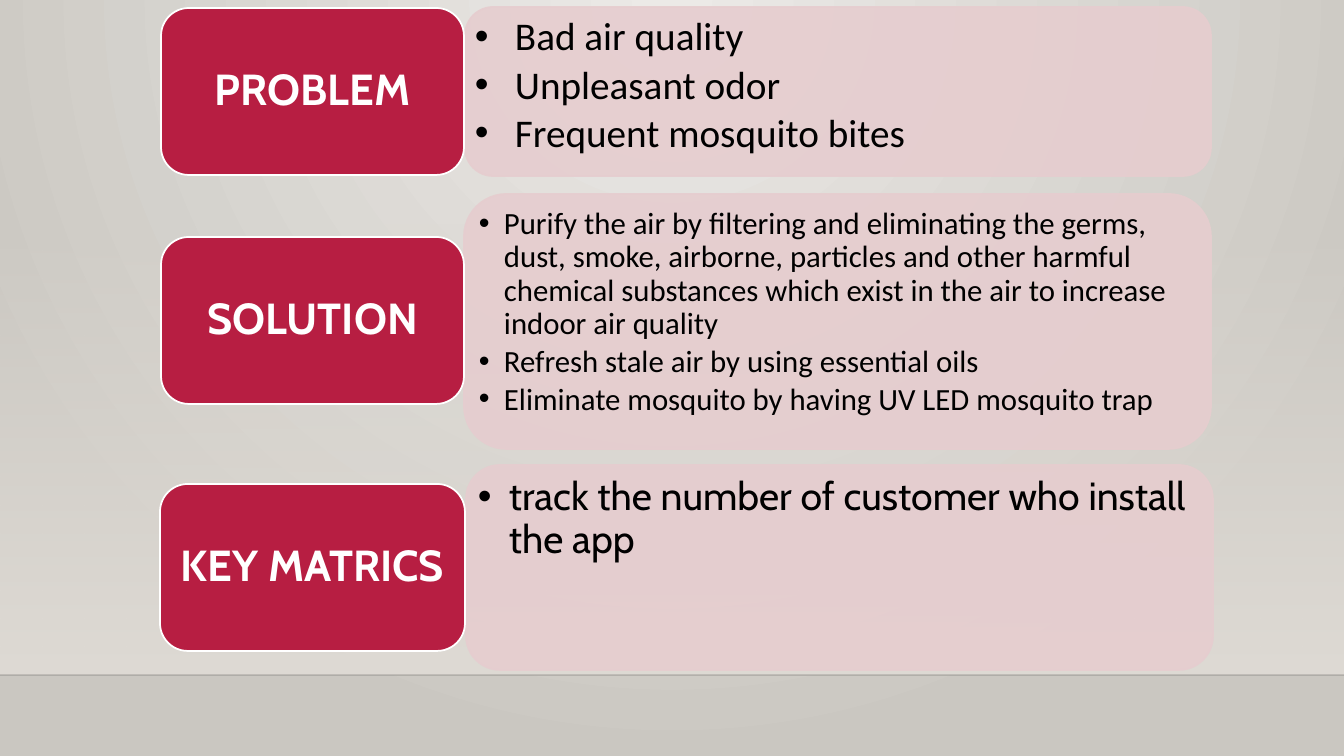
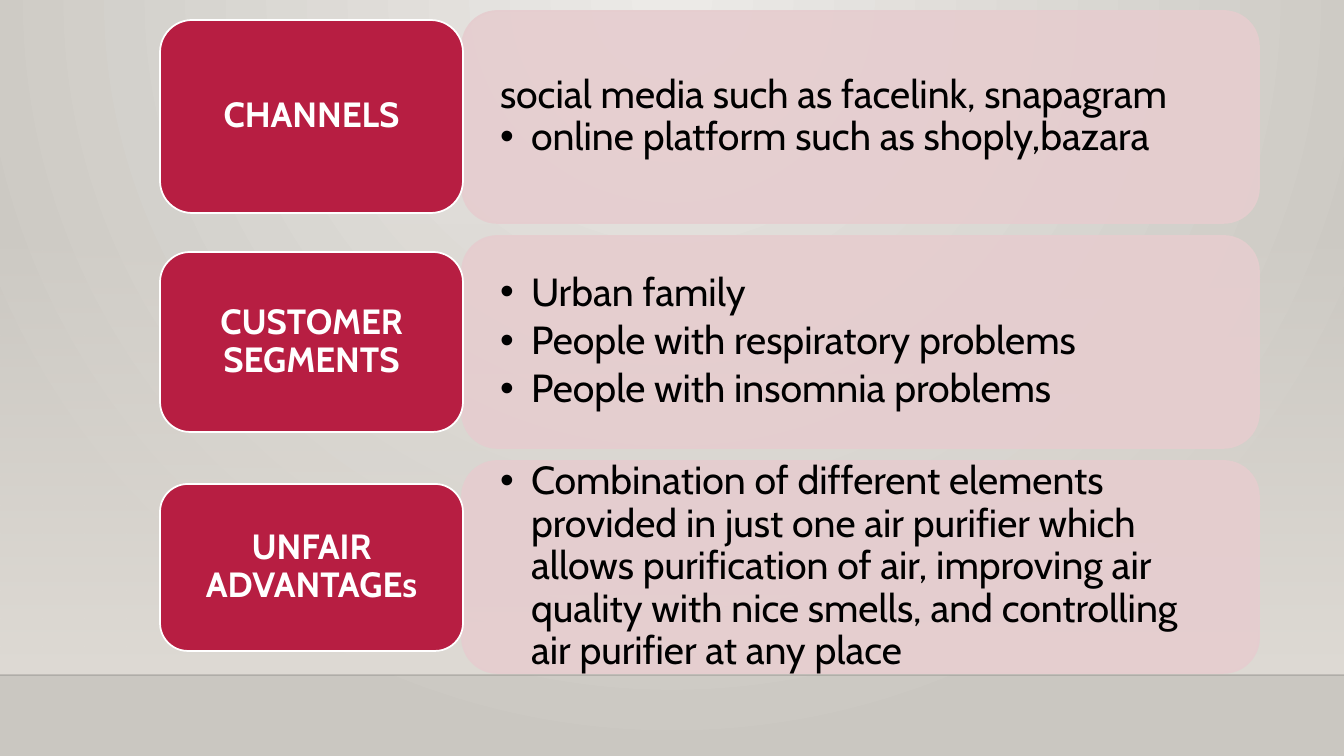
import pptx
import pptx.util
import pptx.dml.color
import pptx.enum.shapes
import pptx.enum.text
import pptx.oxml.ns
import lxml.etree

PX = 914400 / 100.8
SLIDE_WIDTH, SLIDE_HEIGHT, FLOOR_TOP = 1344, 756, 675
COLORS = {
    "glow": "ECEAE7",
    "wall": "CAC7C1",
    "haze": "DFDBD5",
    "floor": "000001",
    "label": "B71E42",
    "panel": "E6CDCF",
    "white": "FFFFFF",
    "text": "000000",
}
RGB = {name: pptx.dml.color.RGBColor.from_string(value) for name, value in COLORS.items()}
SHAPES = pptx.enum.shapes.MSO_SHAPE
ANCHORS = pptx.enum.text.MSO_ANCHOR
qn = pptx.oxml.ns.qn

BOARDS = [
    {
        "label_size": 31,
        "anchor": ANCHORS.TOP,
        "rows": [
            {"label": "PROBLEM", "label_box": (161, 8, 303, 167), "panel_box": (465, 7, 746, 169),
             "pad": (10, 10), "font": "Calibri", "size": 28, "indent": 40,
             "items": ["Bad air quality", "Unpleasant odor", "Frequent mosquito bites"]},
            {"label": "SOLUTION", "label_box": (161, 237, 303, 167), "panel_box": (464, 194, 747, 255),
             "pad": (15, 14), "font": "Calibri", "size": 22, "indent": 25,
             "items": ["Purify the air by filtering and eliminating the germs, dust, smoke, airborne, "
                       "particles and other harmful chemical substances which exist in the air to "
                       "increase indoor air quality",
                       "Refresh stale air by using essential oils",
                       "Eliminate mosquito by having UV LED mosquito trap"]},
            {"label": "KEY MATRICS", "label_box": (160, 484, 305, 167), "panel_box": (466, 465, 747, 205),
             "pad": (12, 12), "font": "Cabin", "size": 28, "indent": 31,
             "items": ["track the number of customer who install the app"]},
        ],
    },
    {
        "label_size": 25,
        "anchor": ANCHORS.MIDDLE,
        "rows": [
            {"label": label, "label_box": (160, label_top, 303, label_height),
             "panel_box": (462, 11 + 225 * index, 797, 212),
             "pad": (38, 0), "font": "Cabin", "size": 28, "indent": 31,
             "items": items, "lead_in": index == 0}
            for index, (label, label_top, label_height, items) in enumerate([
                ("CHANNELS", 20, 193,
                 ["social media such as facelink, snapagram",
                  "online platform such as shoply,bazara"]),
                ("CUSTOMER SEGMENTS", 252, 180,
                 ["Urban family", "People with respiratory problems", "People with insomnia problems"]),
                ("UNFAIR ADVANTAGEs", 484, 167,
                 ["Combination of different elements provided in just one air purifier which allows "
                  "purification of air, improving air quality with nice smells, and controlling air "
                  "purifier at any place"]),
            ])
        ],
    },
]


def px(*lengths):
    return [pptx.util.Emu(round(length * PX)) for length in lengths]


def set_alpha(color, percent):
    lxml.etree.SubElement(color, qn("a:alpha")).set("val", str(percent * 1000))


deck = pptx.Presentation()
deck.slide_width, deck.slide_height = px(SLIDE_WIDTH, SLIDE_HEIGHT)
master = deck.slide_master
layout = deck.slide_layouts.get_by_name("Comparison")

backdrop = master.background.fill
backdrop.gradient()
for stop, name in zip(backdrop.gradient_stops, ("glow", "wall")):
    stop.color.rgb = RGB[name]
backdrop_gradient = master.element.find(".//" + qn("a:gradFill"))
backdrop_gradient.remove(backdrop_gradient.find(qn("a:lin")))
glow_circle = lxml.etree.SubElement(backdrop_gradient, qn("a:path"))
glow_circle.set("path", "circle")
glow_focus = lxml.etree.SubElement(glow_circle, qn("a:fillToRect"))
for side, share in {"l": 43, "t": 0, "r": 43, "b": 100}.items():
    glow_focus.set(side, str(share * 1000))

slides = [deck.slides.add_slide(layout) for board in BOARDS]

haze = slides[0].shapes.add_shape(SHAPES.RECTANGLE, *px(0, 223, SLIDE_WIDTH, FLOOR_TOP - 223))
haze.shadow.inherit = False
haze.line.fill.background()
haze.fill.gradient()
haze.fill.gradient_angle = 270
for stop in haze.fill.gradient_stops:
    stop.color.rgb = RGB["haze"]
set_alpha(haze.element.find(".//" + qn("a:srgbClr")), 0)

floor_edge = slides[0].shapes.add_connector(
    pptx.enum.shapes.MSO_CONNECTOR.STRAIGHT, *px(0, FLOOR_TOP, SLIDE_WIDTH, FLOOR_TOP))
floor_edge.line.color.rgb = RGB["floor"]
floor_edge.line.width = pptx.util.Pt(1)
set_alpha(floor_edge.element.find(".//" + qn("a:srgbClr")), 20)
lxml.etree.SubElement(floor_edge.element.spPr, qn("a:effectLst"))

for position, scenery in enumerate((haze, floor_edge), start=2):
    master.shapes.element.insert(position, scenery.element)

for slide, board in zip(slides, BOARDS):
    title, *lists = list(slide.placeholders)
    for unused in [title, *lists[len(board["rows"]):]]:
        unused.element.getparent().remove(unused.element)

    for row, details in zip(board["rows"], lists):
        panel = slide.shapes.add_shape(SHAPES.FLOWCHART_ALTERNATE_PROCESS, *px(*row["panel_box"]))
        panel.shadow.inherit = False
        panel.fill.solid()
        panel.fill.fore_color.rgb = RGB["panel"]
        panel.line.color.rgb = RGB["panel"]
        panel.line.width = pptx.util.Pt(1.25)
        for color in panel.element.spPr.iter(qn("a:srgbClr")):
            set_alpha(color, 90)

        panel.element.addnext(details.element)
        details.left, details.top, details.width, details.height = px(*row["panel_box"])
        frame = details.text_frame
        frame.word_wrap = True
        frame.auto_size = pptx.enum.text.MSO_AUTO_SIZE.NONE
        frame.vertical_anchor = board["anchor"]
        pad_x, pad_y = px(*row["pad"])
        frame.margin_left = frame.margin_right = pad_x
        frame.margin_top = frame.margin_bottom = pad_y
        frame.text = "\n".join(row["items"])
        for index, item in enumerate(frame.paragraphs):
            is_lead_in = index == 0 and row.get("lead_in", False)
            indent = 0 if is_lead_in else px(row["indent"])[0]
            properties = item._p.get_or_add_pPr()
            properties.set("marL", str(indent))
            properties.set("indent", str(-indent))
            if is_lead_in:
                lxml.etree.SubElement(properties, qn("a:buNone"))
            else:
                lxml.etree.SubElement(properties, qn("a:buFont")).set("typeface", "Arial")
                lxml.etree.SubElement(properties, qn("a:buChar")).set("char", "•")
            item.line_spacing = 0.9
            item.space_before = pptx.util.Pt(0)
            item.space_after = pptx.util.Pt(0 if is_lead_in else round(row["size"] * 0.15, 1))
            for run in item.runs:
                run.font.name = row["font"]
                run.font.size = pptx.util.Pt(row["size"])
                run.font.bold = False
                run.font.color.rgb = RGB["text"]

        label = slide.shapes.add_shape(SHAPES.ROUNDED_RECTANGLE, *px(*row["label_box"]))
        label.shadow.inherit = False
        label.fill.solid()
        label.fill.fore_color.rgb = RGB["label"]
        label.line.color.rgb = RGB["white"]
        label.line.width = pptx.util.Pt(1.25)
        frame = label.text_frame
        frame.word_wrap = True
        frame.vertical_anchor = ANCHORS.MIDDLE
        frame.margin_left = frame.margin_right = px(8)[0]
        frame.text = row["label"]
        heading = frame.paragraphs[0]
        heading.alignment = pptx.enum.text.PP_ALIGN.CENTER
        heading.line_spacing = 0.9
        for run in heading.runs:
            run.font.name = "Cabin"
            run.font.size = pptx.util.Pt(board["label_size"])
            run.font.bold = True
            run.font.color.rgb = RGB["white"]

deck.save("out.pptx")
